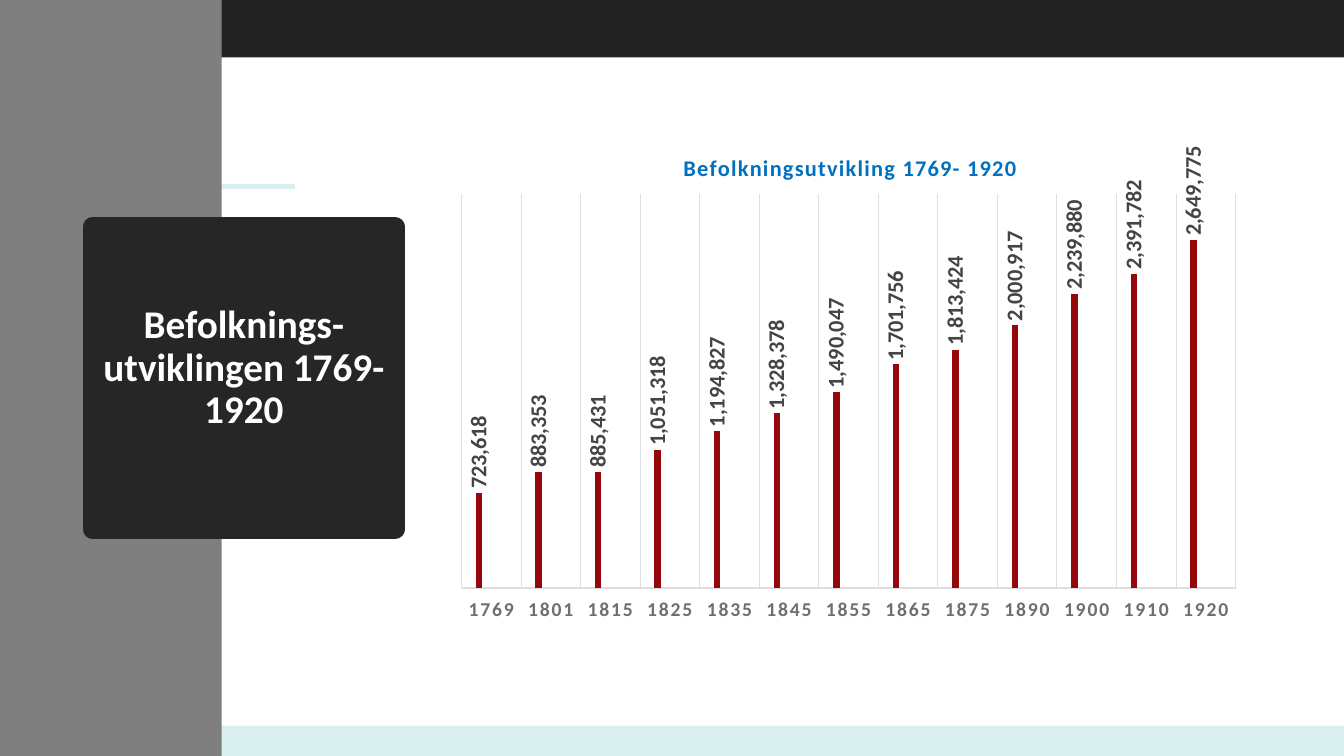
from dataclasses import dataclass

from lxml import etree
from pptx import Presentation
from pptx.chart.data import CategoryChartData
from pptx.dml.color import RGBColor
from pptx.enum.chart import XL_CHART_TYPE, XL_LABEL_POSITION, XL_TICK_LABEL_POSITION, XL_TICK_MARK
from pptx.enum.shapes import MSO_CONNECTOR, MSO_SHAPE
from pptx.enum.text import MSO_ANCHOR, MSO_AUTO_SIZE, PP_ALIGN
from pptx.oxml import parse_xml
from pptx.oxml.ns import nsdecls, qn
from pptx.util import Pt

FONT = "Calibri"
COLOURS = {
    "mint": "DAEFEF", "header": "222222", "sidebar": "7F7F7F", "card": "262626",
    "white": "FFFFFF", "heading": "0070C0", "axis": "6F6F6F", "grid": "DEDEDE",
    "value": "444444", "faint": "909090", "bar": "94070B", "bar2": "B3080D",
    "bar3": "D2A2A2",
}
POPULATION = {
    "1769": 723618, "1801": 883353, "1815": 885431, "1825": 1051318,
    "1835": 1194827, "1845": 1328378, "1855": 1490047, "1865": 1701756,
    "1875": 1813424, "1890": 2000917, "1900": 2239880, "1910": 2391782,
    "1920": 2649775,
}


@dataclass(frozen=True)
class Band:
    left: float
    top: float
    width: float
    height: float
    colour: str


@dataclass(frozen=True)
class SeriesStyle:
    name: str
    fill: str
    label_size: float
    label_colour: str
    label_bold: bool


FOOTER = Band(0, 518.4, 960, 21.6, "mint")
HEADER = Band(0, 0, 960, 41, "header")
SIDEBAR = Band(0, 0, 158.4, 540, "sidebar")
SERIES = [
    SeriesStyle("Series 1", "bar", 16, "value", True),
    SeriesStyle("Series 2", "bar2", 8, "faint", False),
    SeriesStyle("Series 3", "bar3", 8, "faint", False),
]


def rgb(name: str) -> RGBColor:
    return RGBColor.from_string(COLOURS[name])


def format_font(font, *, size: float, colour: str, bold: bool = False) -> None:
    font.name = FONT
    font.size = Pt(size)
    font.bold = bold
    font.color.rgb = rgb(colour)


def write_text(frame, text: str, *, size: float, colour: str, bold: bool = False,
               align=PP_ALIGN.CENTER, line_spacing: float | None = None,
               tracking: int = 0) -> None:
    """Write one paragraph; tracking is in hundredths of a point."""
    paragraph = frame.paragraphs[0]
    paragraph.alignment = align
    paragraph.line_spacing = line_spacing
    run = paragraph.add_run()
    run.text = text
    format_font(run.font, size=size, colour=colour, bold=bold)
    if tracking:
        run.font._element.set("spc", str(tracking))


def add_band(slide, band: Band) -> None:
    shape = slide.shapes.add_shape(MSO_SHAPE.RECTANGLE, Pt(band.left), Pt(band.top),
                                   Pt(band.width), Pt(band.height))
    shape.shadow.inherit = False
    shape.fill.solid()
    shape.fill.fore_color.rgb = rgb(band.colour)
    shape.line.fill.background()


def add_accent_line(slide) -> None:
    accent = slide.shapes.add_connector(MSO_CONNECTOR.STRAIGHT, Pt(74.9), Pt(133.2),
                                        Pt(211), Pt(133.2))
    accent.line.color.rgb = rgb("mint")
    accent.line.width = Pt(3)
    etree.SubElement(accent._element.spPr, qn("a:effectLst"))


def place_title_card(slide) -> None:
    card = slide.shapes.title
    slide.shapes._spTree.append(card._element)
    card.left, card.top, card.width, card.height = Pt(66.2), Pt(162), Pt(216), Pt(216)
    card.fill.solid()
    card.fill.fore_color.rgb = rgb("card")
    card.line.color.rgb = rgb("card")
    card.line.width = Pt(13.75)
    frame = card.text_frame
    frame.word_wrap = True
    frame.auto_size = MSO_AUTO_SIZE.NONE
    frame.vertical_anchor = MSO_ANCHOR.MIDDLE
    frame.margin_left = frame.margin_right = Pt(7.2)
    frame.margin_top, frame.margin_bottom = Pt(3.6), Pt(17.3)
    write_text(frame, "Befolknings-utviklingen 1769- 1920", size=28,
               colour="white", bold=True, line_spacing=0.9)


def manual_layout(target: str, **fractions: float):
    """Build a c:layout with edge-based fractions of the chart area."""
    inner = '<c:layoutTarget val="inner"/>' if target == "plot" else ""
    modes = '<c:xMode val="edge"/><c:yMode val="edge"/>'
    places = "".join(f'<c:{key} val="{value}"/>' for key, value in fractions.items())
    return parse_xml(f'<c:layout {nsdecls("c")}><c:manualLayout>{inner}{modes}{places}'
                     "</c:manualLayout></c:layout>")


def replace_layout(parent, layout, index: int) -> None:
    for old in parent.findall(qn("c:layout")):
        parent.remove(old)
    parent.insert(index, layout)


def style_series(series, style: SeriesStyle) -> None:
    series.format.fill.solid()
    series.format.fill.fore_color.rgb = rgb(style.fill)
    labels = series.data_labels
    labels.show_value = True
    labels.position = XL_LABEL_POSITION.OUTSIDE_END
    labels.number_format = "#,##0"
    labels.number_format_is_linked = False
    format_font(labels.font, size=style.label_size, colour=style.label_colour,
                bold=style.label_bold)
    body = labels._element.find(qn("c:txPr")).find(qn("a:bodyPr"))
    body.set("rot", "-5400000")
    body.set("vert", "horz")


def style_axes(chart) -> None:
    years = chart.category_axis
    years.major_tick_mark = years.minor_tick_mark = XL_TICK_MARK.NONE
    years.tick_label_position = XL_TICK_LABEL_POSITION.LOW
    years.has_major_gridlines = True
    for line in (years.format.line, years.major_gridlines.format.line):
        line.color.rgb = rgb("grid")
        line.width = Pt(0.75)
    year_font = years.tick_labels.font
    format_font(year_font, size=14, colour="axis", bold=True)
    year_font._element.set("spc", "120")
    people = chart.value_axis
    people.visible = False
    people.has_major_gridlines = False
    people.minimum_scale, people.maximum_scale = 0, 3000000


def add_population_chart(slide) -> None:
    data = CategoryChartData(number_format="#,##0")
    data.categories = list(POPULATION)
    for position, style in enumerate(SERIES):
        data.add_series(style.name, [None if position else count
                                     for count in POPULATION.values()])
    chart = slide.shapes.add_chart(XL_CHART_TYPE.COLUMN_CLUSTERED, Pt(318.2), Pt(92.2),
                                   Pt(576), Pt(356.4), data).chart
    format_font(chart.font, size=10, colour="header")
    chart.has_legend = False
    chart.has_title = True
    heading = chart.chart_title
    heading.include_in_layout = False
    write_text(heading.text_frame, "Befolkningsutvikling 1769- 1920", size=16,
               colour="heading", bold=True, tracking=100)
    replace_layout(heading._element, manual_layout("title", x=0.29, y=0.04), 1)
    plot = chart.plots[0]
    plot.vary_by_categories = False
    plot.gap_width, plot.overlap = 444, -90
    for series, style in zip(plot.series, SERIES):
        style_series(series, style)
    style_axes(chart)
    replace_layout(chart._chartSpace.chart.plotArea,
                   manual_layout("plot", x=0.02, y=0.13, w=0.96, h=0.79), 0)


def main() -> None:
    deck = Presentation()
    deck.slide_width, deck.slide_height = Pt(960), Pt(540)
    slide = deck.slides.add_slide(deck.slide_layouts[5])
    for band in (FOOTER, HEADER):
        add_band(slide, band)
    add_accent_line(slide)
    add_band(slide, SIDEBAR)
    place_title_card(slide)
    add_population_chart(slide)
    deck.save("out.pptx")


if __name__ == "__main__":
    main()
